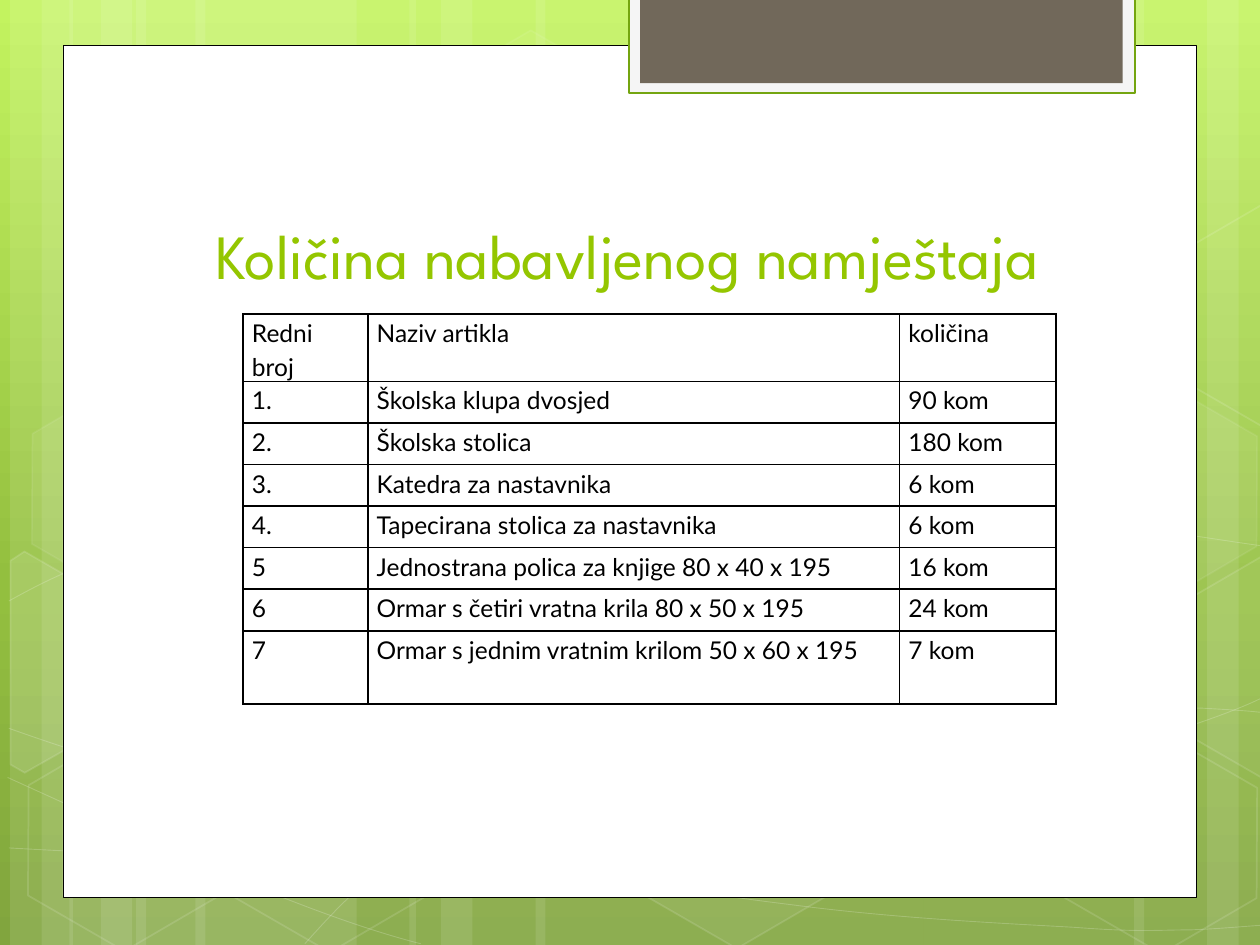
import copy

from lxml import etree
from pptx import Presentation
from pptx.dml.color import RGBColor
from pptx.enum.shapes import MSO_SHAPE
from pptx.enum.text import MSO_ANCHOR, MSO_AUTO_SIZE, PP_ALIGN
from pptx.oxml.ns import qn
from pptx.util import Pt

RECT, HEXAGON = MSO_SHAPE.RECTANGLE, MSO_SHAPE.HEXAGON
CENTER, LEFT = PP_ALIGN.CENTER, PP_ALIGN.LEFT
TOP, BOTTOM = MSO_ANCHOR.TOP, MSO_ANCHOR.BOTTOM
PX = 9144  # 100 px to the inch

COLORS = {
    "white": "FFFFFF", "black": "000000", "title": "94C600",
    "tab": "71685A", "tab_edge": "F5F5F5", "tab_line": "74A510",
    "bg_top": "C3F35F", "bg_mid": "93BF3F", "bg_bottom": "81A53E",
}


def paint(sp, fill=None, line=None, width=1, fill_alpha=100, line_alpha=100):
    """Set fill and line; alphas are percent opacity."""
    sp.shadow.inherit = False
    for part, color in ((sp.fill, fill), (sp.line.fill, line)):
        if color is None:
            part.background()
            continue
        part.solid()
        part.fore_color.rgb = RGBColor.from_string(COLORS[color])
    if line:
        sp.line.width = Pt(width)
    props = sp._element.spPr
    for route, alpha in (("a:solidFill", fill_alpha), ("a:ln/a:solidFill", line_alpha)):
        for clr in props.xpath(route + "/a:srgbClr"):
            if alpha < 100:
                etree.SubElement(clr, qn("a:alpha")).set("val", str(alpha * 1000))


def put_text(tf, text, size=14, font="Lato", color="black", align=LEFT, spacing=None):
    p = tf.paragraphs[0]
    p.alignment = align
    if spacing:
        p.line_spacing = spacing
    r = p.add_run()
    r.text = text
    r.font.size = Pt(size)
    r.font.name = font
    r.font.bold = False
    r.font.color.rgb = RGBColor.from_string(COLORS[color])


prs = Presentation()
prs.slide_width, prs.slide_height = 1000 * PX, 750 * PX
s = prs.slides.add_slide(prs.slide_layouts[5])

# Background gradient, top to bottom
bg = s.background.fill
bg.gradient()
bg.gradient_angle = 270
stop_list = s.background._cSld.find(".//" + qn("a:gsLst"))
stop_list.append(copy.deepcopy(stop_list[-1]))
for stop, name, position in zip(bg.gradient_stops, ("bg_top", "bg_mid", "bg_bottom"), (0, 0.62, 1)):
    stop.color.rgb = RGBColor.from_string(COLORS[name])
    stop.position = position

# Translucent vertical bands: x, width, rotation
for x, w, turn in ((108, 175, 0), (8, 50, 0), (33, 83, 0), (155, 175, 0), (55, 50, 0),
                   (80, 83, 0), (733, 175, 180), (958, 50, 180), (900, 83, 180),
                   (425, 308, 0), (325, 50, 0), (350, 83, 0)):
    sp = s.shapes.add_shape(RECT, x * PX, 0, w * PX, 750 * PX)
    sp.rotation = turn
    paint(sp, "white", fill_alpha=10)

# Thin waves: a start point, then three points for each Bezier segment.
# The number is the index of a point reached by a straight line, if any.
waves = [
    (None, [(7, 673), (61, 676), (115, 679), (190, 678), (265, 677), (358, 675), (458, 665),
            (558, 655), (700, 636), (792, 617), (883, 598), (977, 568), (1007, 551)]),
    (None, [(7, 477), (36, 461), (65, 446), (121, 431), (178, 416), (259, 394), (347, 387),
            (436, 380), (544, 379), (654, 387), (764, 395), (947, 426), (1007, 434)]),
    (None, [(6, 617), (127, 672), (247, 727), (334, 749)]),
    (None, [(7, 578), (38, 589), (70, 600), (128, 616), (186, 631), (273, 656), (357, 673),
            (440, 690), (545, 708), (628, 718), (711, 729), (800, 733), (853, 736),
            (905, 740), (919, 738), (945, 738), (971, 737), (989, 735), (1007, 734)]),
    (22, [(242, 749), (260, 729), (278, 709), (302, 691), (326, 673), (360, 653), (388, 639),
          (416, 625), (433, 619), (470, 609), (506, 599), (573, 585), (608, 578),
          (644, 571), (649, 571), (680, 569), (711, 566), (760, 563), (794, 562),
          (829, 561), (886, 562), (886, 562), (953, 562),
          (971, 563), (988, 564), (997, 565), (1006, 566), (1003, 565), (1006, 566)]),
]
for straight, points in waves:
    fb = s.shapes.build_freeform(*points[0], scale=PX)
    fb.add_line_segments(points[1:], close=False)
    sp = fb.convert_to_shape()
    paint(sp, line="white", width=0.5, line_alpha=20)
    steps = sp._element.xpath(".//a:lnTo")
    if straight:
        steps.pop(straight - 1)
    for i in range(0, len(steps), 3):
        curve = etree.Element(qn("a:cubicBezTo"))
        steps[i].addprevious(curve)
        for step in steps[i:i + 3]:
            curve.append(step[0])
            step.getparent().remove(step)

# Hexagons: x, y, fill opacity, line opacity; None marks one cut off by the slide edge
cut_left = [(0, 12), (6, 0), (94, 0), (138, 77), (94, 152), (81, 152)]
cut_right = [(0, 75), (43, 0), (52, 0), (136, 145), (132, 152), (44, 152)]
for x, y, fill_alpha, line_alpha, corners in (
        (334, 36, 4, 8, None), (497, 589, 6, 12, None), (-33, 459, 10, 12, cut_left),
        (11, 591, 0, 12, None), (14, 312, 7, 8, None), (174, 592, 0, 12, None),
        (753, 453, 10, 12, None), (834, 593, 0, 12, None), (834, 314, 7, 8, None),
        (917, 444, 4, 12, cut_right), (917, 165, 0, 12, cut_right)):
    if corners:
        placed = [(x + dx, y + dy) for dx, dy in corners]
        fb = s.shapes.build_freeform(*placed[0], scale=PX)
        fb.add_line_segments(placed[1:], close=True)
        sp = fb.convert_to_shape()
    else:
        sp = s.shapes.add_shape(HEXAGON, x * PX, y * PX, 175 * PX, 152 * PX)
        sp.adjustments[0] = 0.285
    sp.rotation = 30
    paint(sp, "white" if fill_alpha else None, "white",
          fill_alpha=fill_alpha, line_alpha=line_alpha)

# Page panel and the tab hanging from the top
for x, y, w, h, fill, line, width in (
        (50, 36, 900, 676, "white", "black", 0.5),
        (499, -2, 402, 76, "tab_edge", "tab_line", 1.25),
        (508, -2, 383, 68, "tab", None, 0)):
    sp = s.shapes.add_shape(RECT, x * PX, y * PX, w * PX, h * PX)
    paint(sp, fill, line, width)

title = s.shapes.title
title._element.getparent().append(title._element)  # bring in front of the panel
title.left, title.top, title.width, title.height = (v * PX for v in (114, 112, 768, 125))
tf = title.text_frame
tf.word_wrap = True
tf.auto_size = MSO_AUTO_SIZE.NONE
tf.vertical_anchor = BOTTOM
put_text(tf, "Količina nabavljenog namještaja", size=36, font="League Spartan",
         color="title", align=CENTER)

rows = [
    ("Redni broj", "Naziv artikla", "količina"),
    ("1.", "Školska klupa dvosjed", "90 kom"),
    ("2.", "Školska stolica", "180 kom"),
    ("3.", "Katedra za nastavnika", "6 kom"),
    ("4.", "Tapecirana stolica za nastavnika", "6 kom"),
    ("5", "Jednostrana polica za knjige 80 x 40 x 195", "16 kom"),
    ("6", "Ormar s četiri vratna krila 80 x 50 x 195", "24 kom"),
    ("7", "Ormar s jednim vratnim krilom 50 x 60 x 195", "7 kom"),
]
table = s.shapes.add_table(len(rows), 3, 193 * PX, 249 * PX, 645 * PX, 289 * PX).table
table.first_row = table.horz_banding = False
for column, w in zip(table.columns, (99, 422, 124)):
    column.width = w * PX
for i, row in enumerate(rows):
    table.rows[i].height = (58 if i == len(rows) - 1 else 33) * PX
    for j, text in enumerate(row):
        cell = table.cell(i, j)
        cell.margin_left = cell.margin_right = 7 * PX
        cell.margin_top = cell.margin_bottom = 0
        cell.vertical_anchor = TOP
        put_text(cell.text_frame, text, spacing=1.15)
        tcPr = cell._tc.get_or_add_tcPr()
        for side in ("a:lnL", "a:lnR", "a:lnT", "a:lnB"):
            ln = etree.SubElement(tcPr, qn(side), w=str(Pt(1)))
            solid = etree.SubElement(ln, qn("a:solidFill"))
            etree.SubElement(solid, qn("a:srgbClr"), val=COLORS["black"])
        cell.fill.background()

prs.save("out.pptx")
